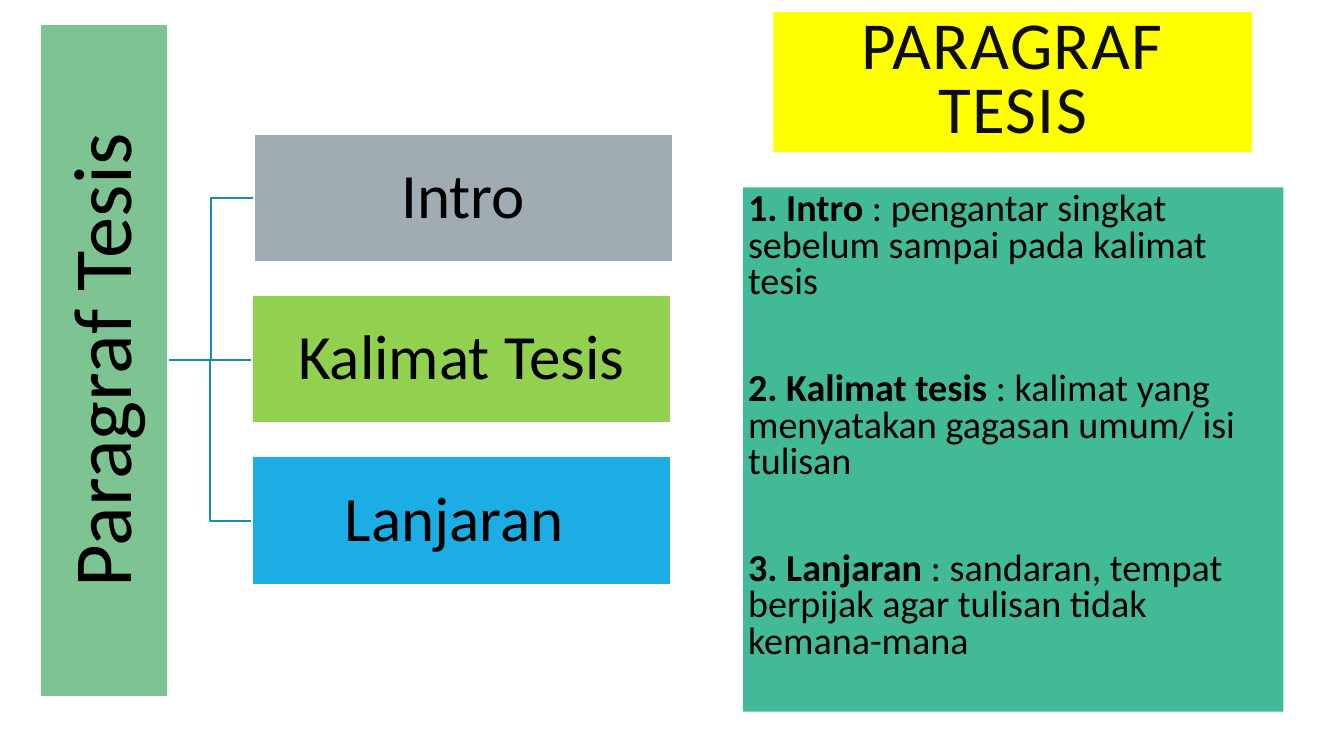
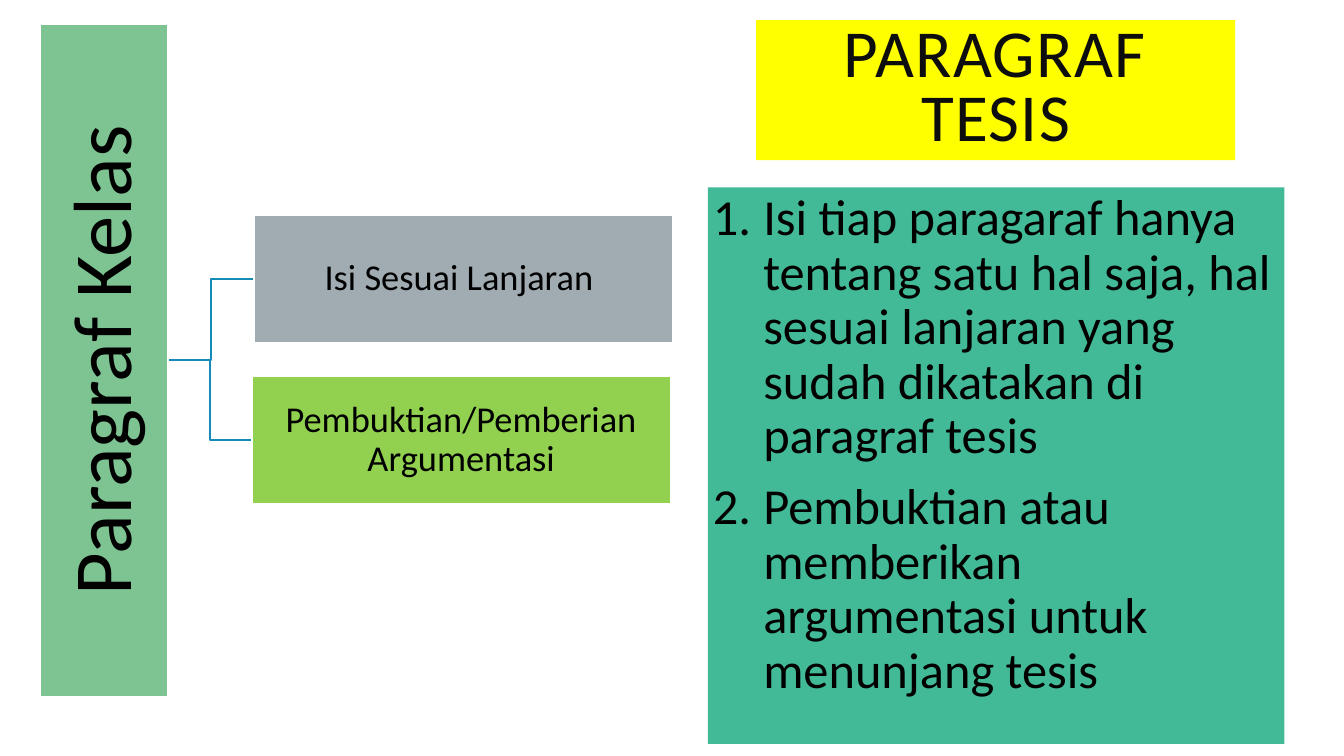
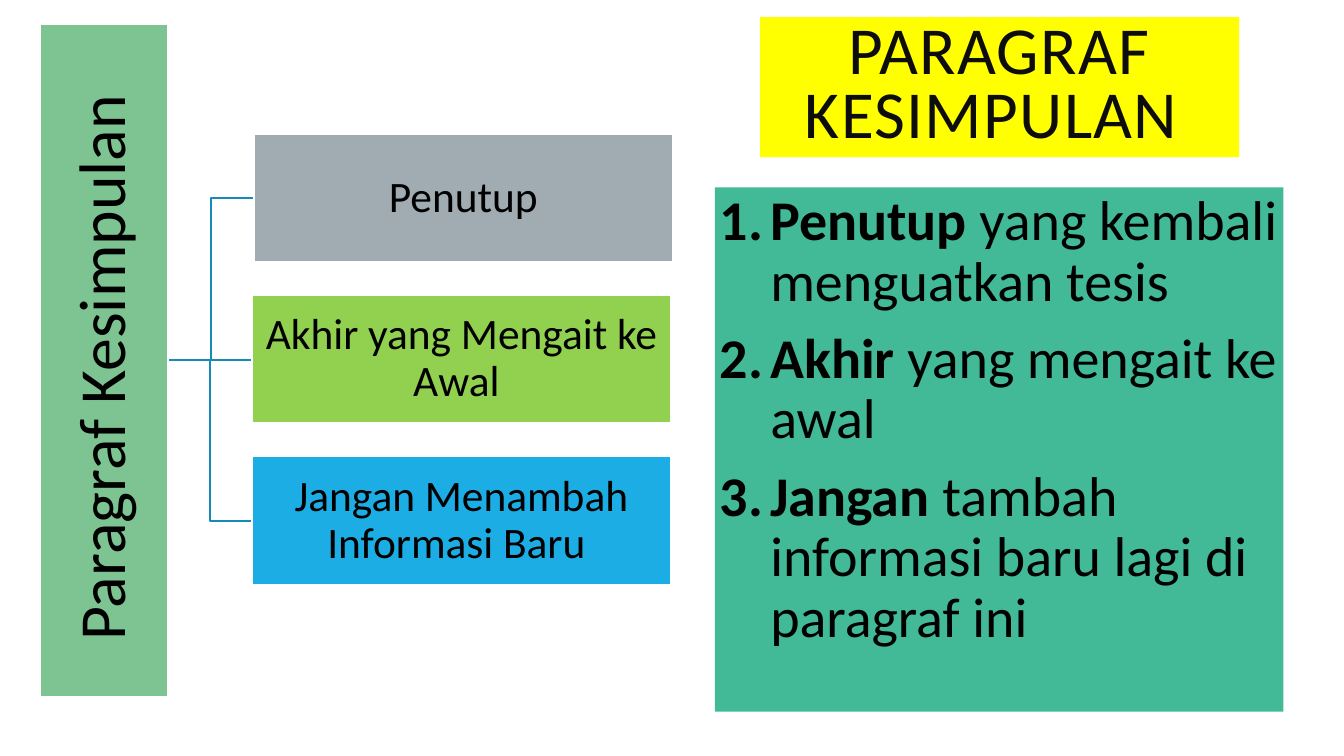
from lxml.etree import SubElement
from pptx import Presentation
from pptx.dml.color import RGBColor
from pptx.enum.shapes import MSO_CONNECTOR, MSO_SHAPE
from pptx.enum.text import MSO_ANCHOR, PP_ALIGN
from pptx.oxml.ns import qn
from pptx.util import Inches, Pt

COLORS = {
    "title": "FFFF00", "title_text": "0D0D0D", "body": "42BA97", "text": "000000",
    "root": "7EC492", "link": "168BB7", "edge": "FFFFFF",
}
NODE_FILLS = ["A1ACB2", "92D050", "1CADE4"]
NODE_W, NODE_H, NODE_STEP, NODE_MID = 4.15, 1.27, 1.6, 2.93

SLIDES = [
    {
        "title": "PARAGRAF TESIS", "title_at": (7.67, 0.12),
        "root": "Paragraf Tesis", "root_size": 59,
        "nodes": ["Intro", "Kalimat Tesis", "Lanjaran "], "node_size": 45,
        "body_at": (7.37, 1.86, 5.36, 5.2), "body_size": 27.2,
        "spacing": 0.8, "gap": 50, "numbered": False,
        "body": [
            ("1. Intro ", ": pengantar singkat sebelum sampai pada kalimat tesis"),
            ("2. Kalimat tesis ", ": kalimat yang menyatakan gagasan umum/ isi tulisan"),
            ("3. Lanjaran ", ": sandaran, tempat berpijak agar tulisan tidak kemana-mana"),
        ],
    },
    {
        "title": "PARAGRAF TESIS", "title_at": (7.5, 0.2),
        "root": "Paragraf Kelas", "root_size": 59,
        "nodes": ["Isi Sesuai Lanjaran ", "Pembuktian/Pemberian Argumentasi"], "node_size": 26,
        "body_at": (7.02, 1.86, 5.72, 5.52), "body_size": 36,
        "spacing": 0.9, "gap": 12, "numbered": True,
        "body": [
            ("", "Isi tiap paragaraf hanya tentang satu hal saja, hal sesuai lanjaran "
                 "yang sudah dikatakan di paragraf tesis"),
            ("", "Pembuktian atau memberikan argumentasi untuk menunjang tesis"),
        ],
    },
    {
        "title": "PARAGRAF KESIMPULAN ", "title_at": (7.54, 0.17),
        "root": "Paragraf Kesimpulan ", "root_size": 47,
        "nodes": ["Penutup", "Akhir yang Mengait ke Awal ", "Jangan Menambah Informasi Baru "],
        "node_size": 31,
        "body_at": (7.09, 1.86, 5.64, 5.2), "body_size": 40,
        "spacing": 0.9, "gap": 12, "numbered": True,
        "body": [
            ("Penutup", " yang kembali menguatkan tesis"),
            ("Akhir ", "yang mengait ke awal"),
            ("Jangan ", "tambah informasi baru lagi di paragraf ini"),
        ],
    },
]


def add_box(s, at, fill, edge=None, inset=0.03, anchor=MSO_ANCHOR.MIDDLE):
    sp = s.shapes.add_shape(MSO_SHAPE.RECTANGLE, *[Inches(v) for v in at])
    sp.shadow.inherit = False
    sp.fill.solid()
    sp.fill.fore_color.rgb = RGBColor.from_string(fill)
    if edge:
        sp.line.color.rgb = RGBColor.from_string(edge)
        sp.line.width = Pt(1.25)
    else:
        sp.line.fill.background()
    tf = sp.text_frame
    margins = {f"margin_{side}": Inches(inset) for side in ("left", "top", "right", "bottom")}
    for name, value in {"word_wrap": True, "vertical_anchor": anchor, **margins}.items():
        setattr(tf, name, value)
    return sp


def add_text(p, runs, size, color=COLORS["text"], align=PP_ALIGN.CENTER, spacing=0.9):
    p.alignment = align
    p.line_spacing = spacing
    for text, bold in runs:
        if text:
            r = p.add_run()
            r.text = text
            for name, value in {"name": "Calibri", "size": Pt(size), "bold": bold}.items():
                setattr(r.font, name, value)
            r.font.color.rgb = RGBColor.from_string(color)


prs = Presentation()
prs.slide_width = Inches(13.33)
prs.slide_height = Inches(7.5)

for d in SLIDES:
    s = prs.slides.add_slide(prs.slide_layouts[6])

    title = add_box(s, (*d["title_at"], 4.75, 1.39), COLORS["title"], inset=0.1)
    p = title.text_frame.paragraphs[0]
    add_text(p, [(d["title"], False)], 48, COLORS["title_text"], spacing=0.8)
    p.runs[0].font._element.set("spc", "100")

    body = add_box(s, d["body_at"], COLORS["body"], inset=0.05, anchor=MSO_ANCHOR.TOP)
    tf = body.text_frame
    for i, (lead, rest) in enumerate(d["body"]):
        p = tf.add_paragraph() if i else tf.paragraphs[0]
        add_text(p, [(lead, True), (rest, False)], d["body_size"],
                 align=PP_ALIGN.LEFT, spacing=d["spacing"])
        if i:
            p.space_before = Pt(d["gap"])
        if d["numbered"]:
            pPr = p._p.get_or_add_pPr()
            pPr.set("marL", str(Inches(0.5)))
            pPr.set("indent", str(Inches(-0.5)))
            SubElement(pPr, qn("a:buFont"), typeface="+mj-lt")
            SubElement(pPr, qn("a:buAutoNum"), type="arabicPeriod")

    root = add_box(s, (0.4, 0.24, 1.27, 6.67), COLORS["root"], COLORS["edge"])
    root.text_frame._txBody.bodyPr.set("vert", "vert270")
    add_text(root.text_frame.paragraphs[0], [(d["root"], False)], d["root_size"])

    middle = (len(d["nodes"]) - 1) / 2
    for i, label in enumerate(d["nodes"]):
        left = 2.5 if i else 2.52
        top = NODE_MID + (i - middle) * NODE_STEP
        node = add_box(s, (left, top, NODE_W, NODE_H), NODE_FILLS[i], COLORS["edge"])
        add_text(node.text_frame.paragraphs[0], [(label, False)], d["node_size"])

        kind = MSO_CONNECTOR.STRAIGHT if i == middle else MSO_CONNECTOR.ELBOW
        link = s.shapes.add_connector(kind, 0, 0, 0, 0)
        link.begin_connect(root, 3)
        link.end_connect(node, 1)
        if i == middle:
            link.end_y = link.begin_y
        link.line.color.rgb = RGBColor.from_string(COLORS["link"])
        link.line.width = Pt(1.25)
        SubElement(link._element.spPr, qn("a:effectLst"))
        link._element.getparent().insert(2, link._element)

prs.save("out.pptx")
